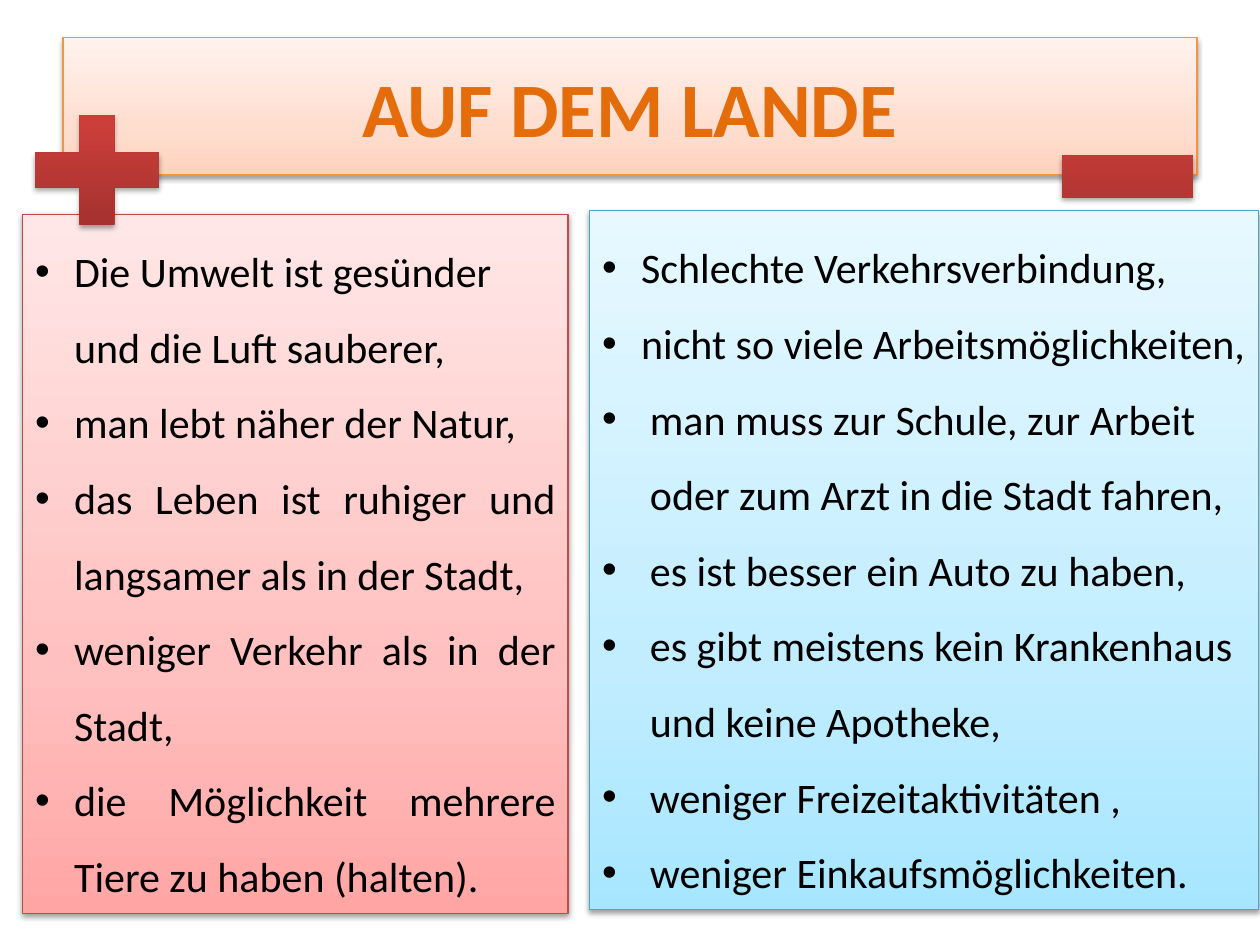
from lxml import etree
from pptx import Presentation, util as u
from pptx.dml.color import RGBColor
from pptx.enum import shapes, text
from pptx.oxml.ns import qn

THEME = {
    "font": "Calibri", "title_size": 44, "body_size": 24,
    "title": "E46C0A", "body": "000000",
    "orange": (["FFD2BD", "FFDED0", "FFF2ED"], 35, "F69240"),
    "blue": (["A7E6FF", "C1EDFF", "E7F8FF"], 35, "46AAC5"),
    "pink": (["FFA6A5", "FFC0BF", "FFE7E7"], 35, "BF4C48"),
    "red": (["9C2F2D", "CB3E3A", "CE3B37"], 80, None),
}
CELL = u.Inches(0.1)  # the slide is a grid of 100 columns by 75 rows

deck = Presentation()
deck.slide_width, deck.slide_height = 100 * CELL, 75 * CELL
page = deck.slides.add_slide(deck.slide_layouts[6])


def add_block(kind, place, style, shadow_alpha, shadow_distance):
    """Add a shape at (column, row, columns, rows) with a vertical gradient and soft shadow."""
    shape = page.shapes.add_shape(kind, *(round(cells * CELL) for cells in place))
    colors, middle, line = THEME[style]
    shape.fill.gradient()
    shape.fill.gradient_angle = 90
    properties = shape.element.spPr
    stops = properties.find(".//" + qn("a:gsLst"))
    for stop in list(stops):
        stops.remove(stop)
    for position, color in zip((0, middle, 100), colors):
        stop = etree.SubElement(stops, qn("a:gs"), pos=str(position * 1000))
        etree.SubElement(stop, qn("a:srgbClr"), val=color)
    if line:
        shape.line.color.rgb = RGBColor.from_string(line)
        shape.line.width = u.Pt(0.75)
    else:
        shape.line.fill.background()
    shape.shadow.inherit = False
    shadow = etree.SubElement(
        properties.find(qn("a:effectLst")), qn("a:outerShdw"), blurRad=str(u.Pt(3.1)),
        dist=str(u.Pt(shadow_distance)), dir="5400000", rotWithShape="0")
    tint = etree.SubElement(shadow, qn("a:srgbClr"), val="000000")
    etree.SubElement(tint, qn("a:alpha"), val=str(shadow_alpha * 1000))
    return shape


def add_span(para, words, role):
    span = para.add_run()
    span.text = words
    span.font.name = THEME["font"]
    span.font.size = u.Pt(THEME[role + "_size"])
    span.font.color.rgb = RGBColor.from_string(THEME[role])
    return span


RECTANGLE = shapes.MSO_SHAPE.RECTANGLE
title = add_block(RECTANGLE, (5, 3, 90, 10.9), "orange", 38, 1.6)
title.text_frame.vertical_anchor = text.MSO_ANCHOR.MIDDLE
heading = title.text_frame.paragraphs[0]
heading.alignment = text.PP_ALIGN.CENTER
add_span(heading, "AUF DEM LANDE", "title").font.bold = True

# Each item: left indent in inches, has a bullet, words
drawbacks = [
    (0.31, True, "Schlechte Verkehrsverbindung,"),
    (0.31, True, "nicht so viele Arbeitsmöglichkeiten,"),
    (0.38, True, "man muss zur Schule, zur Arbeit"),
    (0.38, False, "oder zum Arzt in die Stadt fahren,"),
    (0.38, True, "es ist besser ein Auto zu haben,"),
    (0.38, True, "es gibt meistens kein Krankenhaus und keine Apotheke,"),
    (0.38, True, "weniger Freizeitaktivitäten ,"),
    (0.38, True, "weniger Einkaufsmöglichkeiten."),
]
benefits = [
    (0.31, True, "Die Umwelt ist gesünder"),
    (0.31, False, "und die Luft sauberer,"),
    (0.31, True, "man lebt näher der Natur,"),
    (0.31, True, "das Leben ist ruhiger und langsamer als in der Stadt,"),
    (0.31, True, "weniger Verkehr als in der Stadt,"),
    (0.31, True, "die Möglichkeit mehrere Tiere zu haben (halten)."),
]
panels = [
    ((46.8, 16.7, 53.1, 55.5), "blue", text.PP_ALIGN.LEFT, drawbacks),
    ((1.8, 17, 43.3, 55.5), "pink", text.PP_ALIGN.JUSTIFY, benefits),
]
for place, style, alignment, items in panels:
    box = add_block(RECTANGLE, place, style, 38, 1.6)
    frame = box.text_frame
    frame.word_wrap = True
    frame.auto_size = text.MSO_AUTO_SIZE.SHAPE_TO_FIT_TEXT
    frame.vertical_anchor = text.MSO_ANCHOR.TOP
    for number, (indent, bulleted, words) in enumerate(items):
        para = frame.add_paragraph() if number else frame.paragraphs[0]
        para.alignment = alignment
        para.line_spacing = 1.5
        add_span(para, words, "body")
        layout = para._p.get_or_add_pPr()
        layout.set("marL", str(u.Inches(indent)))
        if bulleted:
            layout.set("indent", str(-u.Inches(indent)))
            etree.SubElement(layout, qn("a:buFont"), typeface="Arial")
            etree.SubElement(layout, qn("a:buChar"), char="•")
    if style == "pink":
        para.space_after = u.Pt(6)

add_block(shapes.MSO_SHAPE.MATH_PLUS, (1, 7.6, 13.4, 11.8), "red", 35, 1.8)
add_block(shapes.MSO_SHAPE.MATH_MINUS, (82.4, 6.9, 14.2, 14.2), "red", 35, 1.8)

deck.save("out.pptx")
